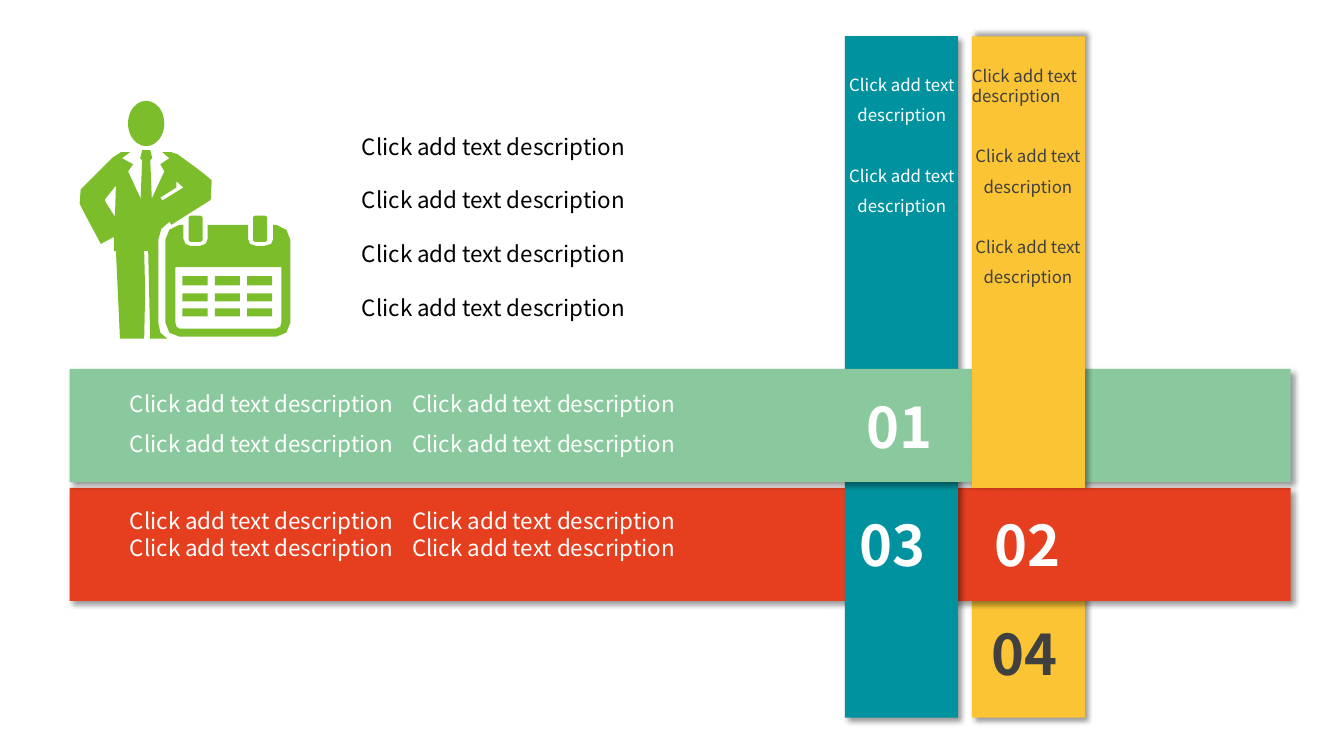
from dataclasses import dataclass

from lxml import etree
from pptx import Presentation
from pptx import util as u
from pptx.dml.color import RGBColor
from pptx.enum import shapes, text
from pptx.oxml import ns

SCALE = 9144  # EMU per px, 100 px to the inch
FONT = "Noto Sans CJK JP"
PHRASE = "Click add text description"
COLUMN_GAP = 280
COLORS = {
    "yellow": "FAC435",
    "red": "E53F1F",
    "teal": "00939F",
    "mint": "8AC99D",
    "icon": "7CBD2C",
    "white": "FFFFFF",
    "dark": "404040",
    "black": "000000",
}


@dataclass(frozen=True)
class Box:
    left: int
    top: int
    width: int
    height: int

    def emu(self) -> tuple[int, ...]:
        return tuple(px(n) for n in (self.left, self.top, self.width, self.height))


@dataclass(frozen=True)
class Band:
    box: Box
    color: str
    shadow_angle: int = 45


@dataclass(frozen=True)
class Caption:
    box: Box
    lines: tuple[str, ...]
    style: dict


def px(length: int) -> int:
    return u.Emu(length * SCALE)


def child(parent, tag: str, **attributes):
    return etree.SubElement(parent, ns.qn(tag), attributes)


def paint(shape, color: str) -> None:
    shape.shadow.inherit = False
    shape.fill.solid()
    shape.fill.fore_color.rgb = RGBColor.from_string(COLORS[color])
    shape.line.fill.background()


def draw_preset(parent, kind, box: Box, color: str):
    shape = parent.add_shape(kind, *box.emu())
    paint(shape, color)
    return shape


def draw_band(slide, band: Band) -> None:
    shape = draw_preset(slide.shapes, shapes.MSO_SHAPE.RECTANGLE, band.box, band.color)
    effects = shape._element.spPr.find(ns.qn("a:effectLst"))
    shadow = child(effects, "a:outerShdw", blurRad=str(u.Pt(4)), dist=str(u.Pt(3)),
                   dir=str(band.shadow_angle * 60000), algn="ctr", rotWithShape="0")
    child(child(shadow, "a:srgbClr", val=COLORS["black"]), "a:alpha", val="40000")


def draw_outline(parent, contours) -> None:
    """Draw closed contours as one shape; inner contours are holes."""
    builder = parent.build_freeform(*contours[0][0], scale=SCALE)
    for number, (start, *rest) in enumerate(contours):
        if number:
            builder.move_to(*start)
        builder.add_line_segments(rest, close=True)
    paint(builder.convert_to_shape(), "icon")


def write(frame, lines, *, size=16, color="white", bold=False, align=None,
          spacing=1.0, gap=0.0, tab=0, bullets_off=False) -> None:
    """Fill a text frame, one paragraph per line; gap is the points between them."""
    frame.word_wrap = True
    frame.auto_size = text.MSO_AUTO_SIZE.NONE
    for number, line in enumerate(lines):
        paragraph = frame.add_paragraph() if number else frame.paragraphs[0]
        properties = paragraph._p.get_or_add_pPr()
        if bullets_off:
            properties.set("marL", "0")
            properties.set("indent", "0")
            child(properties, "a:buNone")
        if tab:
            child(child(properties, "a:tabLst"), "a:tab", pos=str(px(tab)), algn="l")
        paragraph.alignment = align
        paragraph.line_spacing = spacing
        paragraph.space_before = u.Pt(gap if number else 0)
        run = paragraph.add_run()
        run.text = line
        run.font.name = FONT
        run.font.size = u.Pt(size)
        run.font.bold = bold
        run.font.color.rgb = RGBColor.from_string(COLORS[color])


def draw_caption(slide, caption: Caption):
    frame = slide.shapes.add_textbox(*caption.box.emu()).text_frame
    write(frame, caption.lines, **caption.style)
    return frame


BANDS = (
    Band(Box(964, 478, 112, 234), "yellow"),
    Band(Box(69, 484, 1211, 112), "red"),
    Band(Box(838, 36, 112, 676), "teal"),
    Band(Box(69, 366, 1211, 112), "mint"),
    Band(Box(964, 36, 112, 448), "yellow", 315),
)
PAIRS = (f"{PHRASE}\t{PHRASE}",) * 2
NARROW = dict(size=12, align=text.PP_ALIGN.CENTER, spacing=1.5, gap=21.6)
NUMBER = dict(size=40, bold=True)
CAPTIONS = (
    Caption(Box(119, 382, 681, 91), PAIRS, dict(tab=COLUMN_GAP, gap=9.5)),
    Caption(Box(119, 498, 681, 131), PAIRS, dict(tab=COLUMN_GAP)),
    Caption(Box(828, 59, 133, 192), (PHRASE,) * 2, NARROW),
    Caption(Box(850, 385, 109, 77), ("01",), NUMBER),
    Caption(Box(977, 502, 98, 77), ("02",), NUMBER),
    Caption(Box(974, 610, 98, 77), ("04",), NUMBER | dict(color="dark")),
    Caption(Box(843, 502, 106, 77), ("03",), NUMBER),
)
YELLOW_CAPTION = Caption(Box(954, 60, 131, 252), (PHRASE,) * 3, NARROW | dict(color="dark"))

CALENDAR = (
    ((274, 223), (271, 223), (271, 237), (269, 242), (262, 244), (254, 244), (248, 242),
     (246, 237), (246, 223), (206, 223), (206, 237), (204, 242), (198, 244), (189, 244),
     (184, 242), (182, 237), (182, 223), (178, 223), (168, 228), (164, 238), (164, 320),
     (168, 330), (178, 334), (274, 334), (284, 330), (288, 320), (288, 238), (284, 228)),
    ((279, 320), (278, 324), (274, 326), (178, 326), (175, 324), (174, 320),
     (174, 265), (279, 265)),
)
SUIT = (
    ((210, 179), (203, 173), (194, 166), (176, 153), (170, 151), (161, 151), (168, 157),
     (159, 163), (163, 170), (145, 209), (127, 170), (132, 163), (121, 157), (129, 151),
     (120, 151), (112, 156), (80, 188), (79, 202), (84, 212), (100, 242), (113, 235),
     (113, 249), (115, 249), (119, 336), (143, 336), (144, 290), (143, 249), (147, 249),
     (149, 336), (166, 336), (159, 330), (157, 320), (157, 238), (160, 227), (168, 220),
     (170, 223), (208, 199), (209, 198)),
    ((114, 215), (105, 201), (104, 198), (115, 184)),
    ((161, 199), (159, 196), (175, 186), (175, 180), (182, 186)),
)
COLLAR = (((149, 149), (151, 157), (145, 163), (139, 157), (141, 149)),)
TIE = (((149, 158), (151, 209), (145, 215), (139, 209), (141, 158)),)


def draw_icon(slide) -> None:
    """Draw the standing figure with a calendar as one group."""
    icon = slide.shapes.add_group_shape().shapes
    kinds = shapes.MSO_SHAPE
    draw_preset(icon, kinds.OVAL, Box(127, 100, 36, 45), "icon")
    for left in (187, 251):
        draw_preset(icon, kinds.ROUNDED_RECTANGLE, Box(left, 214, 14, 26), "icon")
    for contours in (CALENDAR, SUIT, COLLAR, TIE):
        draw_outline(icon, contours)
    for top, height in ((274, 9), (291, 8), (306, 8)):
        for column in range(3):
            draw_preset(icon, kinds.RECTANGLE, Box(181 + 32 * column, top, 25, height), "icon")


def main() -> None:
    presentation = Presentation()
    presentation.slide_width, presentation.slide_height = px(1333), px(750)
    slide = presentation.slides.add_slide(presentation.slide_layouts[1])
    title = slide.shapes.title._element
    title.getparent().remove(title)

    for band in BANDS:
        draw_band(slide, band)
    for caption in CAPTIONS:
        draw_caption(slide, caption)
    first = draw_caption(slide, YELLOW_CAPTION).paragraphs[0]
    first.alignment, first.line_spacing = text.PP_ALIGN.LEFT, 1.0

    body = slide.placeholders[1]
    body.left, body.top, body.width, body.height = Box(349, 100, 373, 225).emu()
    write(body.text_frame, (PHRASE,) * 4, color="black", spacing=2.0, bullets_off=True)
    draw_icon(slide)
    presentation.save("out.pptx")


if __name__ == "__main__":
    main()
